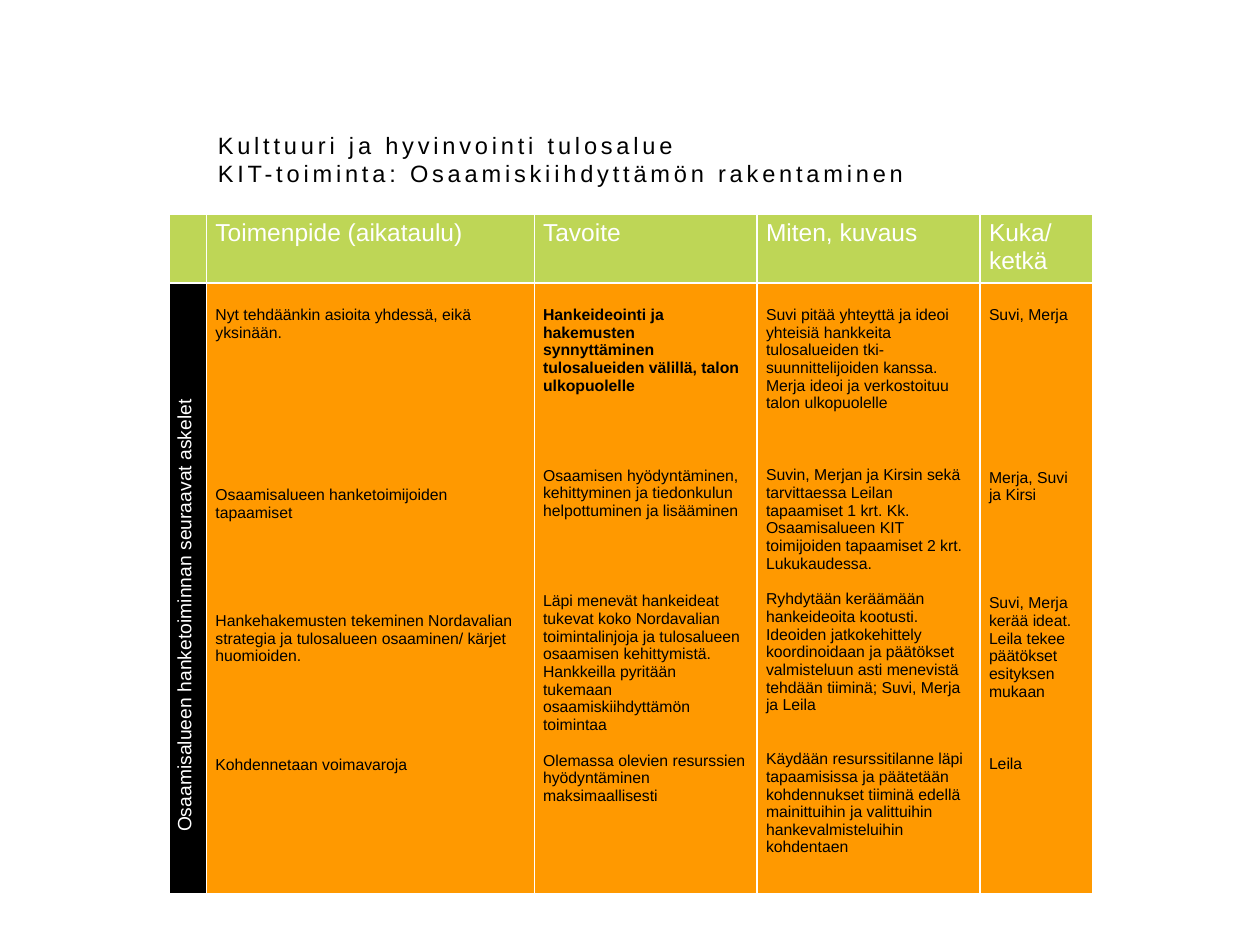
from dataclasses import dataclass
from pptx import Presentation
from pptx.dml.color import RGBColor
from pptx.enum import text
from pptx.oxml import parse_xml
from pptx.oxml.ns import nsdecls
from pptx.util import Inches, Pt


@dataclass(frozen=True)
class Theme:
    font: str = "Arial"
    ink: str = "000000"
    light: str = "FFFFFF"
    header: str = "BED656"
    body: str = "FF9900"
    title_size: float = 13.5
    header_size: float = 14
    side_size: float = 11
    body_size: float = 9


THEME = Theme()
LINE = 10.35
TITLE = "Kulttuuri ja hyvinvointi tulosalue\vKIT-toiminta: Osaamiskiihdyttämön rakentaminen"
SIDE = "Osaamisalueen hanketoiminnan seuraavat askelet"
COLUMNS = [
    {
        "heading": ["Toimenpide (aikataulu)"],
        "width": 2.6,
        "steps": [
            "Nyt tehdäänkin asioita yhdessä, eikä yksinään.",
            "Osaamisalueen hanketoimijoiden tapaamiset",
            "Hankehakemusten tekeminen Nordavalian strategia ja tulosalueen osaaminen/ kärjet huomioiden.",
            "Kohdennetaan voimavaroja",
        ],
        "gaps": [0, 8, 5, 5],
    },
    {
        "heading": ["Tavoite"],
        "width": 1.77,
        "steps": [
            "Hankeideointi ja hakemusten synnyttäminen tulosalueiden välillä, talon ulkopuolelle",
            "Osaamisen hyödyntäminen, kehittyminen ja tiedonkulun helpottuminen ja lisääminen",
            "Läpi menevät hankeideat tukevat koko Nordavalian toimintalinjoja ja tulosalueen osaamisen "
            "kehittymistä. Hankkeilla pyritään tukemaan osaamiskiihdyttämön toimintaa",
            "Olemassa olevien resurssien hyödyntäminen maksimaallisesti",
        ],
        "gaps": [0, 4, 4, 1],
        "bold": [0],
    },
    {
        "heading": ["Miten, kuvaus"],
        "width": 1.77,
        "steps": [
            "Suvi pitää yhteyttä ja ideoi yhteisiä hankkeita tulosalueiden tki-suunnittelijoiden kanssa. "
            "Merja ideoi ja verkostoituu talon ulkopuolelle",
            "Suvin, Merjan ja Kirsin sekä tarvittaessa Leilan tapaamiset 1 krt. Kk. "
            "Osaamisalueen KIT toimijoiden tapaamiset 2 krt. Lukukaudessa.",
            "Ryhdytään keräämään hankeideoita kootusti. Ideoiden jatkokehittely koordinoidaan ja päätökset "
            "valmisteluun asti menevistä tehdään tiiminä; Suvi, Merja ja Leila",
            "Käydään resurssitilanne läpi tapaamisissa ja päätetään kohdennukset tiiminä edellä "
            "mainittuihin ja valittuihin hankevalmisteluihin kohdentaen",
        ],
        "gaps": [0, 3, 1, 2],
    },
    {
        "heading": ["Kuka/", "ketkä"],
        "width": 0.89,
        "steps": [
            "Suvi, Merja",
            "Merja, Suvi ja Kirsi",
            "Suvi, Merja kerää ideat. Leila tekee päätökset esityksen mukaan",
            "Leila",
        ],
        "gaps": [0, 8, 5, 3],
    },
]
SIDE_WIDTH = 0.3
ROW_HEIGHTS = [0.52, 4.55]


def write(frame, paragraphs, *, size, color, gaps=(), bold=(), spacing=None, indent=0):
    for index, words in enumerate(paragraphs):
        para = frame.paragraphs[0] if index == 0 else frame.add_paragraph()
        para.alignment = text.PP_ALIGN.LEFT
        para.line_spacing = 1.0
        para.space_before = Pt(gaps[index] * LINE if gaps else 0)
        para.space_after = Pt(0)
        if indent:
            para._p.get_or_add_pPr().set("marL", str(Inches(indent)))
        para.text = words
        for span in para.runs:
            span.font.name = THEME.font
            span.font.size = Pt(size)
            span.font.bold = index in bold
            span.font.color.rgb = RGBColor.from_string(color)
            if spacing:
                span.font._element.set("spc", str(round(spacing * 100)))


def style_cell(cell, fill, top=0.04):
    cell.margin_left = cell.margin_right = Inches(0.07)
    cell.margin_top, cell.margin_bottom = Inches(top), Inches(0.04)
    cell.fill.solid()
    cell.fill.fore_color.rgb = RGBColor.from_string(fill)
    properties = cell._tc.get_or_add_tcPr()
    for index, side in enumerate(("lnL", "lnR", "lnT", "lnB")):
        properties.insert(index, parse_xml(
            f'<a:{side} {nsdecls("a")} w="{Pt(1)}"><a:solidFill>'
            f'<a:srgbClr val="{THEME.light}"/></a:solidFill></a:{side}>'))


def add_title(page):
    box = page.shapes.add_textbox(Inches(1.63), Inches(1.15), Inches(6.75), Inches(0.22))
    frame = box.text_frame
    frame.word_wrap = True
    frame.vertical_anchor = text.MSO_ANCHOR.MIDDLE
    write(frame, [TITLE], size=THEME.title_size, color=THEME.ink, spacing=2.2)


def add_plan(page):
    widths = [SIDE_WIDTH] + [column["width"] for column in COLUMNS]
    table = page.shapes.add_table(
        len(ROW_HEIGHTS), len(widths), Inches(1.34), Inches(1.7),
        Inches(sum(widths)), Inches(sum(ROW_HEIGHTS))).table
    for column, width in zip(table.columns, widths):
        column.width = Inches(width)
    for row, height in zip(table.rows, ROW_HEIGHTS):
        row.height = Inches(height)

    style_cell(table.cell(0, 0), THEME.header)
    side = table.cell(1, 0)
    style_cell(side, THEME.ink)
    side._tc.get_or_add_tcPr().set("vert", "vert270")
    write(side.text_frame, [SIDE], size=THEME.side_size, color=THEME.light, indent=0.42)

    for index, column in enumerate(COLUMNS, start=1):
        heading, steps = table.cell(0, index), table.cell(1, index)
        style_cell(heading, THEME.header)
        write(heading.text_frame, column["heading"], size=THEME.header_size, color=THEME.light)
        style_cell(steps, THEME.body, top=0.04 + LINE / 72)
        write(steps.text_frame, column["steps"], size=THEME.body_size, color=THEME.ink,
              gaps=column["gaps"], bold=column.get("bold", ()))


def main():
    deck = Presentation()
    deck.slide_width, deck.slide_height = Inches(10), Inches(7.5)
    page = deck.slides.add_slide(deck.slide_layouts[6])
    add_title(page)
    add_plan(page)
    deck.save("out.pptx")


if __name__ == "__main__":
    main()
